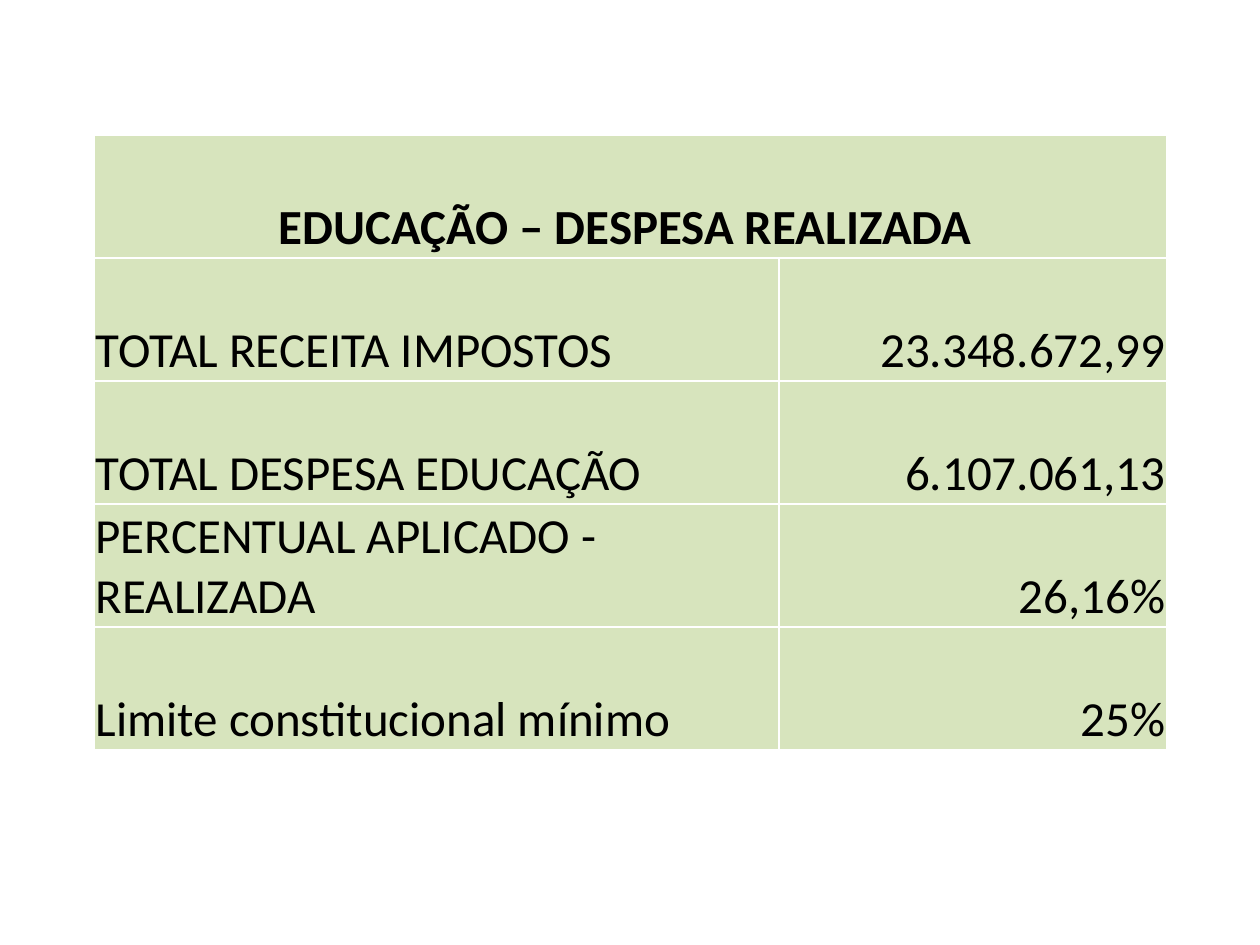
"""Builds the slide with the table of education spending."""
import pptx
import pptx.dml.color
import pptx.enum.text
import pptx.util

Cm = pptx.util.Cm
Align = pptx.enum.text.PP_ALIGN

TITLE = "EDUCAÇÃO – DESPESA REALIZADA "
ROWS = [
    ("TOTAL RECEITA IMPOSTOS", "23.348.672,99"),
    ("TOTAL DESPESA EDUCAÇÃO", "6.107.061,13"),
    ("PERCENTUAL APLICADO - REALIZADA", "26,16%"),
    ("Limite constitucional mínimo", "25%"),
]
THEME = {"font": "Calibri", "size": 28, "ink": "000000", "fill": "D7E4BD"}
LEFT, TOP = 1.9, 2.72
WIDTHS = (13.8, 7.82)
HEIGHT = 2.48
INSET = 0.03


def color(name):
    return pptx.dml.color.RGBColor.from_string(THEME[name])


def paint(cell):
    cell.fill.solid()
    cell.fill.fore_color.rgb = color("fill")
    cell.margin_left = cell.margin_right = cell.margin_top = Cm(INSET)
    cell.margin_bottom = 0
    cell.vertical_anchor = pptx.enum.text.MSO_ANCHOR.BOTTOM


def write(cell, text, align, bold=False):
    para = cell.text_frame.paragraphs[0]
    para.alignment = align
    run = para.add_run()
    run.text = text
    font = run.font
    font.name = THEME["font"]
    font.size = pptx.util.Pt(THEME["size"])
    font.bold = bold
    font.color.rgb = color("ink")


def main():
    deck = pptx.Presentation()
    deck.slide_width, deck.slide_height = Cm(25.4), Cm(19.05)
    slide = deck.slides.add_slide(deck.slide_layouts[6])
    count = len(ROWS) + 1
    table = slide.shapes.add_table(
        count, len(WIDTHS), Cm(LEFT), Cm(TOP),
        Cm(sum(WIDTHS)), Cm(HEIGHT * count)).table
    table.first_row = table.horz_banding = False
    for col, width in zip(table.columns, WIDTHS):
        col.width = Cm(width)
    for row in table.rows:
        row.height = Cm(HEIGHT)
    for cell in table.iter_cells():
        paint(cell)

    head = table.cell(0, 0)
    head.merge(table.cell(0, len(WIDTHS) - 1))
    write(head, TITLE, Align.CENTER, True)
    for line, pair in enumerate(ROWS, 1):
        for side, (text, align) in enumerate(zip(pair, (Align.LEFT, Align.RIGHT))):
            write(table.cell(line, side), text, align)
    deck.save("out.pptx")


if __name__ == "__main__":
    main()
